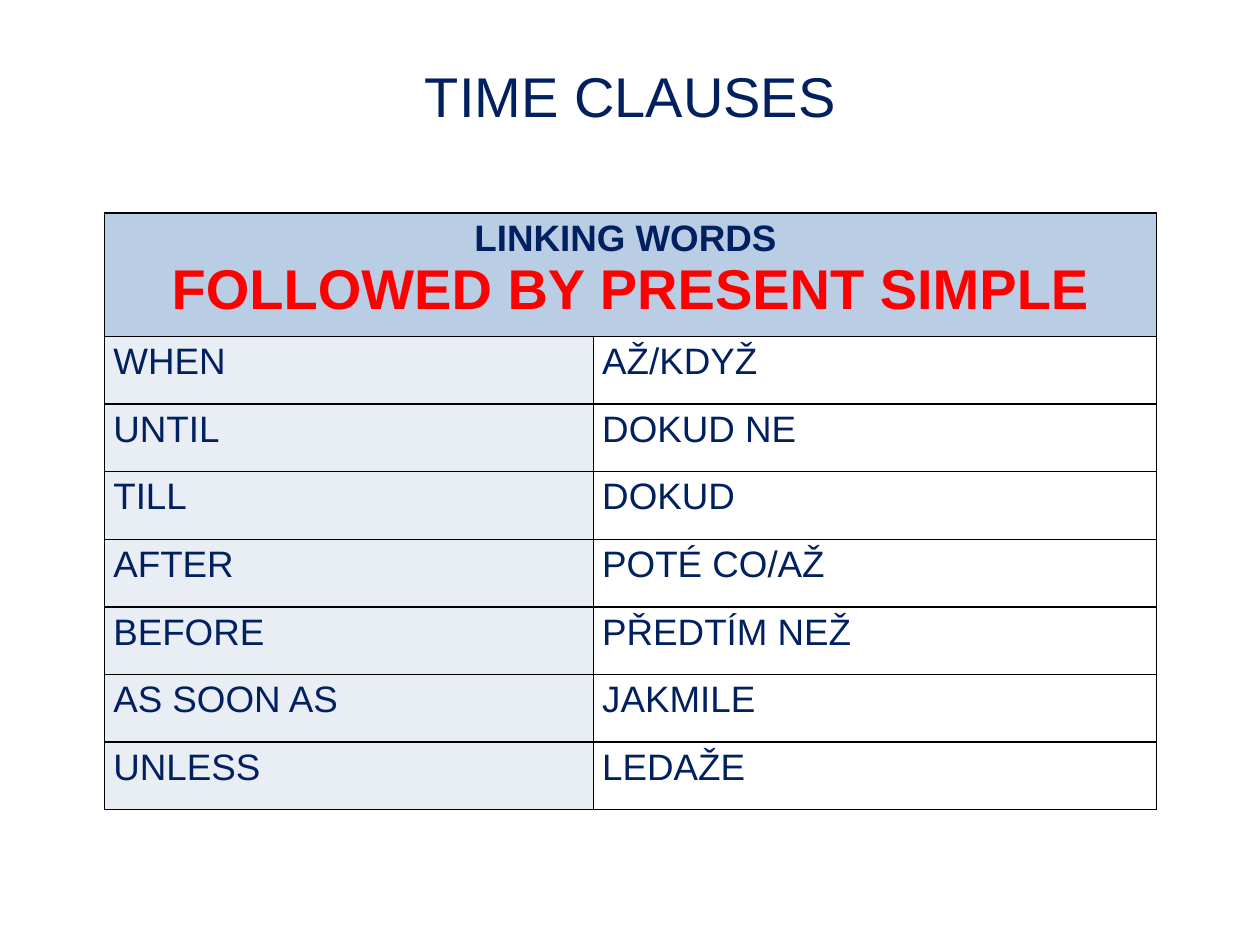
from dataclasses import dataclass

from lxml.etree import SubElement
from pptx import Presentation
from pptx.dml.color import RGBColor
from pptx.enum.text import MSO_ANCHOR, PP_ALIGN
from pptx.oxml.ns import qn
from pptx.util import Inches, Pt


@dataclass(frozen=True)
class Theme:
    font: str = "Arial"
    navy: str = "002060"
    red: str = "FF0000"
    border: str = "000000"
    header_fill: str = "B9CDE5"
    word_fill: str = "E9EDF4"
    meaning_fill: str = "FFFFFF"
    large: int = 32
    body: int = 21


theme = Theme()


def add_span(para, text, size, color, bold=False):
    span = para.add_run()
    span.text = text
    span.font.name = theme.font
    span.font.size = Pt(size)
    span.font.bold = bold
    span.font.color.rgb = RGBColor.from_string(color)


def style_cell(cell, fill):
    cell.margin_left = cell.margin_right = Inches(0.07)
    cell.margin_top = cell.margin_bottom = Inches(0.04)
    properties = cell._tc.get_or_add_tcPr()
    for side in ("a:lnL", "a:lnR", "a:lnT", "a:lnB"):
        line = SubElement(properties, qn(side), w=str(Pt(1)))
        solid = SubElement(line, qn("a:solidFill"))
        SubElement(solid, qn("a:srgbClr"), val=theme.border)
    cell.fill.solid()
    cell.fill.fore_color.rgb = RGBColor.from_string(fill)


linking_words = [
    ("WHEN", "AŽ/KDYŽ"),
    ("UNTIL", "DOKUD NE"),
    ("TILL", "DOKUD"),
    ("AFTER", "POTÉ CO/AŽ"),
    ("BEFORE", "PŘEDTÍM NEŽ"),
    ("AS SOON AS", "JAKMILE"),
    ("UNLESS", "LEDAŽE"),
]

# Slide and grid
deck = Presentation()
deck.slide_width, deck.slide_height = Inches(10), Inches(7.5)
page = deck.slides.add_slide(deck.slide_layouts[5])
left = Inches(0.83)
column_widths = [Inches(3.88), Inches(4.47)]
row_heights = [Inches(0.98)] + [Inches(0.537)] * len(linking_words)
width = sum(column_widths)

# Title
title = page.shapes.title
title.left, title.top, title.width, title.height = left, Inches(0.44), width, Inches(0.64)
title.text_frame.vertical_anchor = MSO_ANCHOR.TOP
title.text_frame.word_wrap = True
para = title.text_frame.paragraphs[0]
para.alignment = PP_ALIGN.CENTER
add_span(para, "TIME CLAUSES", theme.large, theme.navy)

# Table of linking words
table = page.shapes.add_table(
    len(row_heights), len(column_widths), left, Inches(1.69), width, sum(row_heights)
).table
table.horz_banding = False
for column, column_width in zip(table.columns, column_widths):
    column.width = column_width
for row, row_height in zip(table.rows, row_heights):
    row.height = row_height

# Header across both columns
header = table.cell(0, 0)
header.merge(table.cell(0, 1))
for column_index in range(2):
    style_cell(table.cell(0, column_index), theme.header_fill)
frame = header.text_frame
first, second = frame.paragraphs[0], frame.add_paragraph()
first.alignment = second.alignment = PP_ALIGN.CENTER
add_span(first, "LINKING WORDS ", theme.body, theme.navy, bold=True)
add_span(second, "FOLLOWED BY PRESENT SIMPLE", theme.large, theme.red, bold=True)

# Words and their meanings
fills = (theme.word_fill, theme.meaning_fill)
for row_index, pair in enumerate(linking_words, start=1):
    for column_index, (text, fill) in enumerate(zip(pair, fills)):
        cell = table.cell(row_index, column_index)
        style_cell(cell, fill)
        add_span(cell.text_frame.paragraphs[0], text, theme.body, theme.navy)

deck.save("out.pptx")
